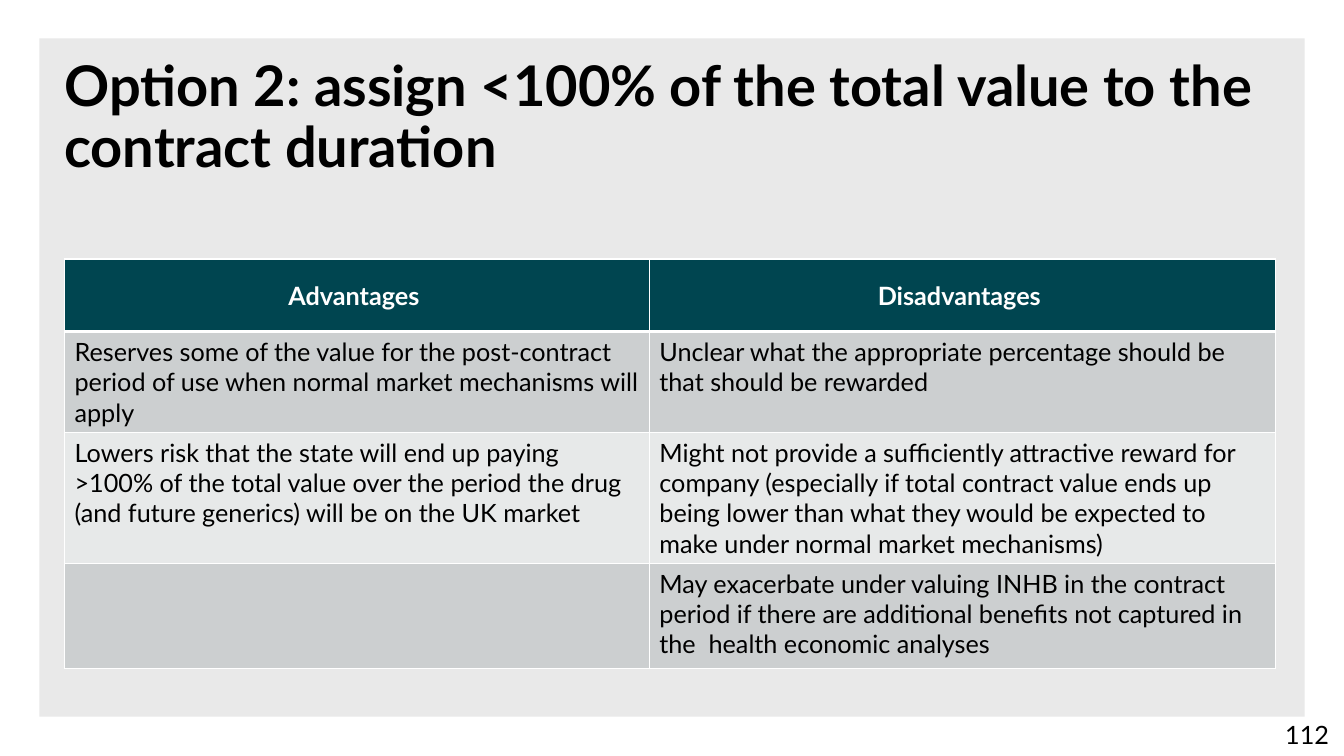
from lxml import etree
from pptx import Presentation
from pptx.dml.color import RGBColor
from pptx.enum.shapes import MSO_SHAPE
from pptx.enum.text import MSO_ANCHOR, PP_ALIGN
from pptx.oxml.ns import qn
from pptx.util import Inches, Pt

TITLE = "Option 2: assign <100% of the total value to the contract duration"
PAGE_NUMBER = "112"
ROWS = [
    ("Advantages ", "Disadvantages "),
    ("Reserves some of the value for the post-contract period of use when normal market mechanisms will apply",
     "Unclear what the appropriate percentage should be that should be rewarded"),
    ("Lowers risk that the state will end up paying >100% of the total value over the period the drug "
     "(and future generics) will be on the UK market",
     "Might not provide a sufficiently attractive reward for company (especially if total contract value "
     "ends up being lower than what they would be expected to make under normal market mechanisms)"),
    ("",
     "May exacerbate under valuing INHB in the contract period if there are additional benefits "
     "not captured in the  health economic analyses"),
]
COLUMN_WIDTHS = (5.8, 6.21)
ROW_HEIGHTS = (0.72, 0.82, 1.04, 1.04)

FONT = "Lato"
BLACK = RGBColor(0x00, 0x00, 0x00)
WHITE = RGBColor(0xFF, 0xFF, 0xFF)
PANEL = RGBColor(0xE9, 0xE9, 0xE9)
TEAL = RGBColor(0x00, 0x45, 0x50)
BANDS = (RGBColor(0xE7, 0xE9, 0xE9), RGBColor(0xCC, 0xCF, 0xD0))


def write_text(frame, text, size=18, color=BLACK, bold=False, align=PP_ALIGN.LEFT, spacing=None):
    frame.word_wrap = True
    paragraph = frame.paragraphs[0]
    paragraph.alignment = align
    paragraph.line_spacing = spacing
    paragraph.font.size = Pt(size)
    if text:
        run = paragraph.add_run()
        run.text = text
        run.font.name = FONT
        run.font.size = Pt(size)
        run.font.bold = bold
        run.font.color.rgb = color


def set_borders(cell, bottom_width):
    properties = cell._tc.get_or_add_tcPr()
    widths = {"a:lnL": 1, "a:lnR": 1, "a:lnT": 1, "a:lnB": bottom_width}
    for position, (tag, width) in enumerate(widths.items()):
        line = etree.Element(qn(tag), w=str(Pt(width)))
        fill = etree.SubElement(line, qn("a:solidFill"))
        etree.SubElement(fill, qn("a:srgbClr"), val=str(WHITE))
        properties.insert(position, line)


def add_comparison_table(slide):
    table = slide.shapes.add_table(
        len(ROWS), len(COLUMN_WIDTHS), Inches(0.64), Inches(2.57),
        Inches(sum(COLUMN_WIDTHS)), Inches(sum(ROW_HEIGHTS))).table
    for column, width in zip(table.columns, COLUMN_WIDTHS):
        column.width = Inches(width)
    for row_index, (row, height, texts) in enumerate(zip(table.rows, ROW_HEIGHTS, ROWS)):
        row.height = Inches(height)
        header = row_index == 0
        for cell, text in zip(row.cells, texts):
            cell.fill.solid()
            cell.fill.fore_color.rgb = TEAL if header else BANDS[row_index % 2]
            cell.vertical_anchor = MSO_ANCHOR.MIDDLE if header else MSO_ANCHOR.TOP
            write_text(cell.text_frame, text, bold=header, color=WHITE if header else BLACK,
                       align=PP_ALIGN.CENTER if header else PP_ALIGN.LEFT)
            set_borders(cell, bottom_width=3 if header else 1)


def main():
    presentation = Presentation()
    presentation.slide_width = Inches(13.33)
    presentation.slide_height = Inches(7.5)
    slide = presentation.slides.add_slide(presentation.slide_layouts[6])

    number_box = slide.shapes.add_textbox(Inches(11.44), Inches(7.09), Inches(1.84), Inches(0.4))
    write_text(number_box.text_frame, PAGE_NUMBER, align=PP_ALIGN.RIGHT)

    panel = slide.shapes.add_shape(
        MSO_SHAPE.RECTANGLE, Inches(0.39), Inches(0.38), Inches(12.55), Inches(6.73))
    panel.shadow.inherit = False
    panel.fill.solid()
    panel.fill.fore_color.rgb = PANEL
    panel.line.fill.background()

    title_box = slide.shapes.add_textbox(Inches(0.54), Inches(0.53), Inches(12.11), Inches(1.4))
    write_text(title_box.text_frame, TITLE, size=40, bold=True, spacing=0.9)

    add_comparison_table(slide)
    presentation.save("out.pptx")


if __name__ == "__main__":
    main()
